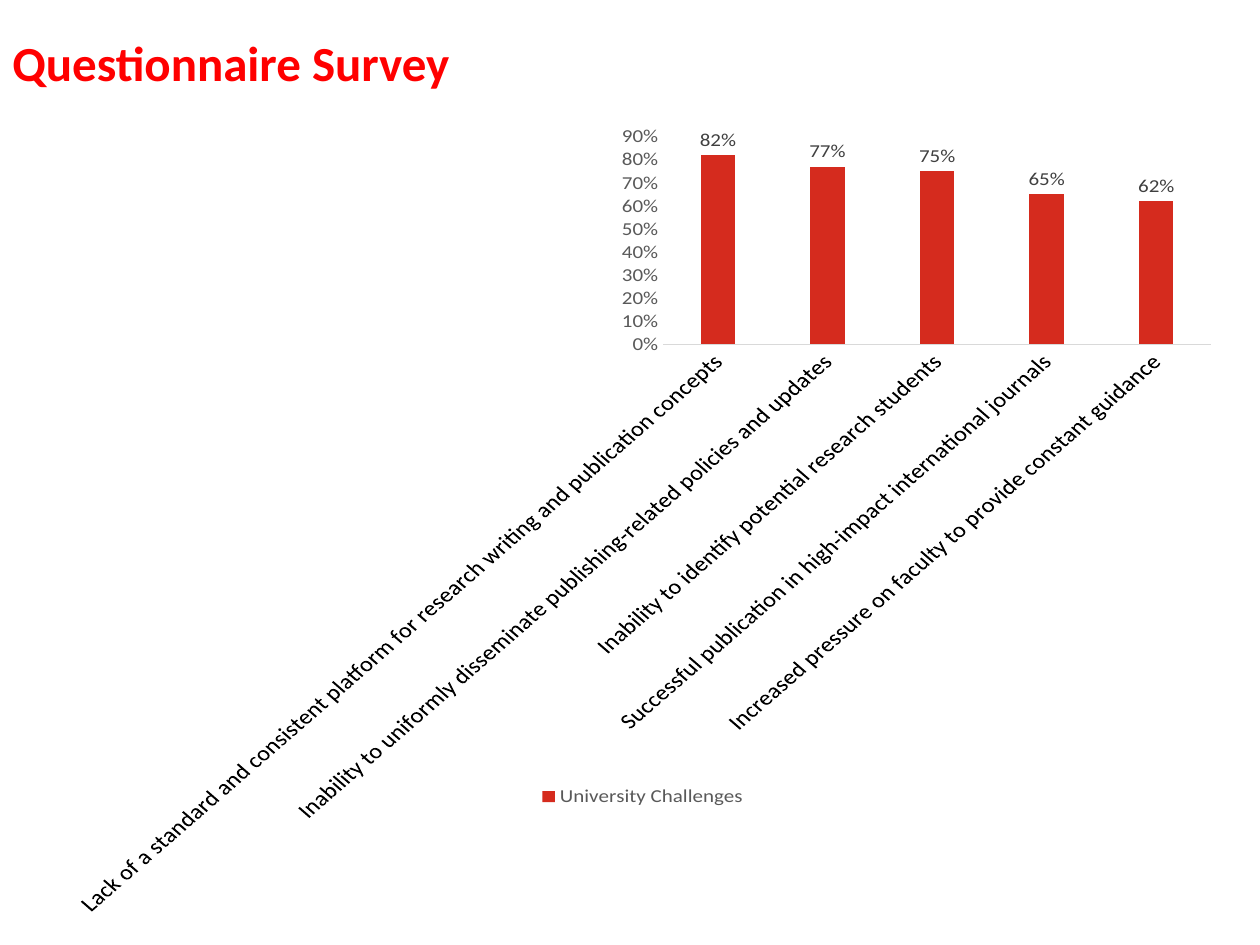
from typing import Any, NamedTuple

from pptx import Presentation
from pptx import util as u
from pptx.chart.data import CategoryChartData
from pptx.dml.color import RGBColor
from pptx.enum import chart as ch
from pptx.enum import text

WIDTH, HEIGHT = u.Inches(10), u.Inches(7.5)
FONT = "Calibri"
LABEL_ANGLE = -45


class Area(NamedTuple):
    """A rectangle in shares of the slide's width and height."""
    left: float
    top: float
    width: float
    height: float

    def lengths(self) -> tuple[int, ...]:
        sides = (WIDTH, HEIGHT, WIDTH, HEIGHT)
        return tuple(round(share * side) for share, side in zip(self, sides))


class Challenge(NamedTuple):
    label: str
    share: float


TITLE_AREA = Area(0, -0.02, 0.9, 0.17)
CHART_AREA = Area(0.04, 0.13, 0.94, 0.84)
CHALLENGES = (
    Challenge("Lack of a standard and consistent platform for research writing "
              "and publication concepts", 0.82),
    Challenge("Inability to uniformly disseminate publishing-related policies and updates", 0.77),
    Challenge("Inability to identify potential research students", 0.75),
    Challenge("Successful publication in high-impact international journals", 0.65),
    Challenge("Increased pressure on faculty to provide constant guidance", 0.62),
)


def color(value: str) -> RGBColor:
    return RGBColor.from_string(value)


def apply(target: Any, **values: Any) -> None:
    for name, value in values.items():
        setattr(target, name, value)


def style_font(font: Any, size: float, hex_color: str, bold: bool = False) -> None:
    apply(font, name=FONT, size=u.Pt(size), bold=bold)
    font.color.rgb = color(hex_color)


def add_title(slide: Any) -> None:
    frame = slide.shapes.add_textbox(*TITLE_AREA.lengths()).text_frame
    apply(frame, word_wrap=True, vertical_anchor=text.MSO_ANCHOR.MIDDLE)
    paragraph = frame.paragraphs[0]
    paragraph.text = "Questionnaire Survey"
    style_font(paragraph.runs[0].font, 28, "FF0000", bold=True)


def style_axes(chart: Any) -> None:
    category, value = chart.category_axis, chart.value_axis
    for axis, size, hex_color in ((category, 14, "000000"), (value, 12, "595959")):
        apply(axis, major_tick_mark=ch.XL_TICK_MARK.NONE,
              minor_tick_mark=ch.XL_TICK_MARK.NONE, has_major_gridlines=False)
        style_font(axis.tick_labels.font, size, hex_color)
    category.format.line.color.rgb = color("D9D9D9")
    category.format.line.width = u.Pt(0.75)
    body = category._element.txPr.bodyPr
    body.set("rot", str(LABEL_ANGLE * 60000))
    body.set("vert", "horz")
    value.format.line.fill.background()
    apply(value.tick_labels, number_format="0%", number_format_is_linked=False)


def add_challenge_chart(slide: Any) -> None:
    data = CategoryChartData(number_format="0%")
    data.categories = [challenge.label for challenge in CHALLENGES]
    data.add_series("University Challenges", [challenge.share for challenge in CHALLENGES])
    chart = slide.shapes.add_chart(
        ch.XL_CHART_TYPE.COLUMN_CLUSTERED, *CHART_AREA.lengths(), data).chart
    apply(chart, has_title=False, has_legend=True)
    style_font(chart.font, 10, "000000")
    apply(chart.legend, position=ch.XL_LEGEND_POSITION.BOTTOM, include_in_layout=False)
    style_font(chart.legend.font, 12, "595959")
    style_axes(chart)

    plot = chart.plots[0]
    apply(plot, gap_width=219, overlap=-27, vary_by_categories=False, has_data_labels=True)
    fill = plot.series[0].format.fill
    fill.solid()
    fill.fore_color.rgb = color("D52B1E")
    apply(plot.data_labels, show_value=True, number_format="0%",
          number_format_is_linked=False, position=ch.XL_LABEL_POSITION.OUTSIDE_END)
    style_font(plot.data_labels.font, 12, "404040")


def main() -> None:
    presentation = Presentation()
    apply(presentation, slide_width=WIDTH, slide_height=HEIGHT)
    slide = presentation.slides.add_slide(presentation.slide_layouts[6])
    add_title(slide)
    add_challenge_chart(slide)
    presentation.save("out.pptx")


if __name__ == "__main__":
    main()
